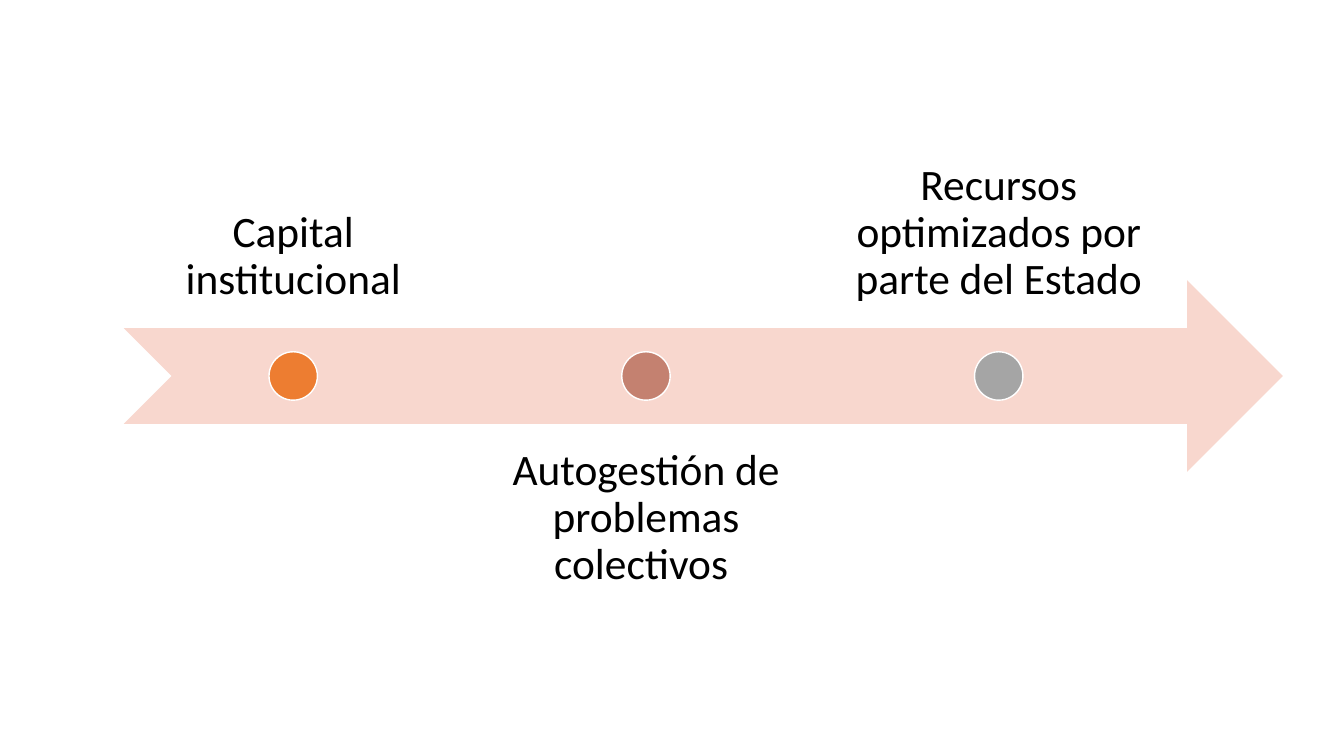
"""Build a slide with a three-stage timeline arrow."""
from dataclasses import dataclass

import pptx
import pptx.dml.color
import pptx.enum.shapes
import pptx.enum.text
import pptx.slide
import pptx.util
from pptx.util import Cm

SHAPE = pptx.enum.shapes.MSO_SHAPE
ANCHOR = pptx.enum.text.MSO_ANCHOR

ARROW_LEFT, ARROW_TOP = 3.12, 7.06
ARROW_WIDTH, ARROW_HEIGHT = 29.21, 4.83
FIRST_CENTER, STAGE_STEP = 7.39, 8.89
LABEL_WIDTH, LABEL_HEIGHT = 8.48, 4.83
LABEL_ABOVE, LABEL_BELOW = 3.43, 10.69
LABEL_INSET = 0.61
DOT_SIZE = 1.22


@dataclass
class Stage:
    label: str
    color: str
    above: bool


STAGES = [
    Stage("Capital institucional", "ED7D31", True),
    Stage("Autogestión de problemas colectivos ", "C48170", False),
    Stage("Recursos optimizados por parte del Estado", "A5A5A5", True),
]


def rgb(color: str) -> pptx.dml.color.RGBColor:
    return pptx.dml.color.RGBColor.from_string(color)


def add_arrow(s: pptx.slide.Slide) -> None:
    sp = s.shapes.add_shape(SHAPE.NOTCHED_RIGHT_ARROW, Cm(ARROW_LEFT), Cm(ARROW_TOP),
                            Cm(ARROW_WIDTH), Cm(ARROW_HEIGHT))
    sp.shadow.inherit = False
    sp.fill.solid()
    sp.fill.fore_color.rgb = rgb("F8D7CE")
    sp.line.fill.background()


def add_label(s: pptx.slide.Slide, stage: Stage, center: float) -> None:
    top = LABEL_ABOVE if stage.above else LABEL_BELOW
    sp = s.shapes.add_textbox(Cm(center - LABEL_WIDTH / 2), Cm(top),
                              Cm(LABEL_WIDTH), Cm(LABEL_HEIGHT))
    tf = sp.text_frame
    tf.word_wrap = True
    tf.vertical_anchor = ANCHOR.BOTTOM if stage.above else ANCHOR.TOP
    tf.margin_left = tf.margin_right = Cm(LABEL_INSET)
    tf.margin_top = tf.margin_bottom = Cm(LABEL_INSET)
    tf.text = stage.label
    p = tf.paragraphs[0]
    p.alignment = pptx.enum.text.PP_ALIGN.CENTER
    p.line_spacing = 0.9
    r = p.runs[0]
    r.font.name = "Calibri"
    r.font.size = pptx.util.Pt(31)
    r.font.color.rgb = rgb("000000")


def add_dot(s: pptx.slide.Slide, stage: Stage, center: float) -> None:
    top = ARROW_TOP + (ARROW_HEIGHT - DOT_SIZE) / 2
    sp = s.shapes.add_shape(SHAPE.OVAL, Cm(center - DOT_SIZE / 2), Cm(top),
                            Cm(DOT_SIZE), Cm(DOT_SIZE))
    sp.shadow.inherit = False
    sp.fill.solid()
    sp.fill.fore_color.rgb = rgb(stage.color)
    sp.line.color.rgb = rgb("FFFFFF")
    sp.line.width = pptx.util.Pt(1)


def main() -> None:
    prs = pptx.Presentation()
    prs.slide_width, prs.slide_height = Cm(33.87), Cm(19.05)
    s = prs.slides.add_slide(prs.slide_layouts[6])
    add_arrow(s)
    for i, stage in enumerate(STAGES):
        center = FIRST_CENTER + i * STAGE_STEP
        add_label(s, stage, center)
        add_dot(s, stage, center)
    prs.save("out.pptx")


if __name__ == "__main__":
    main()
